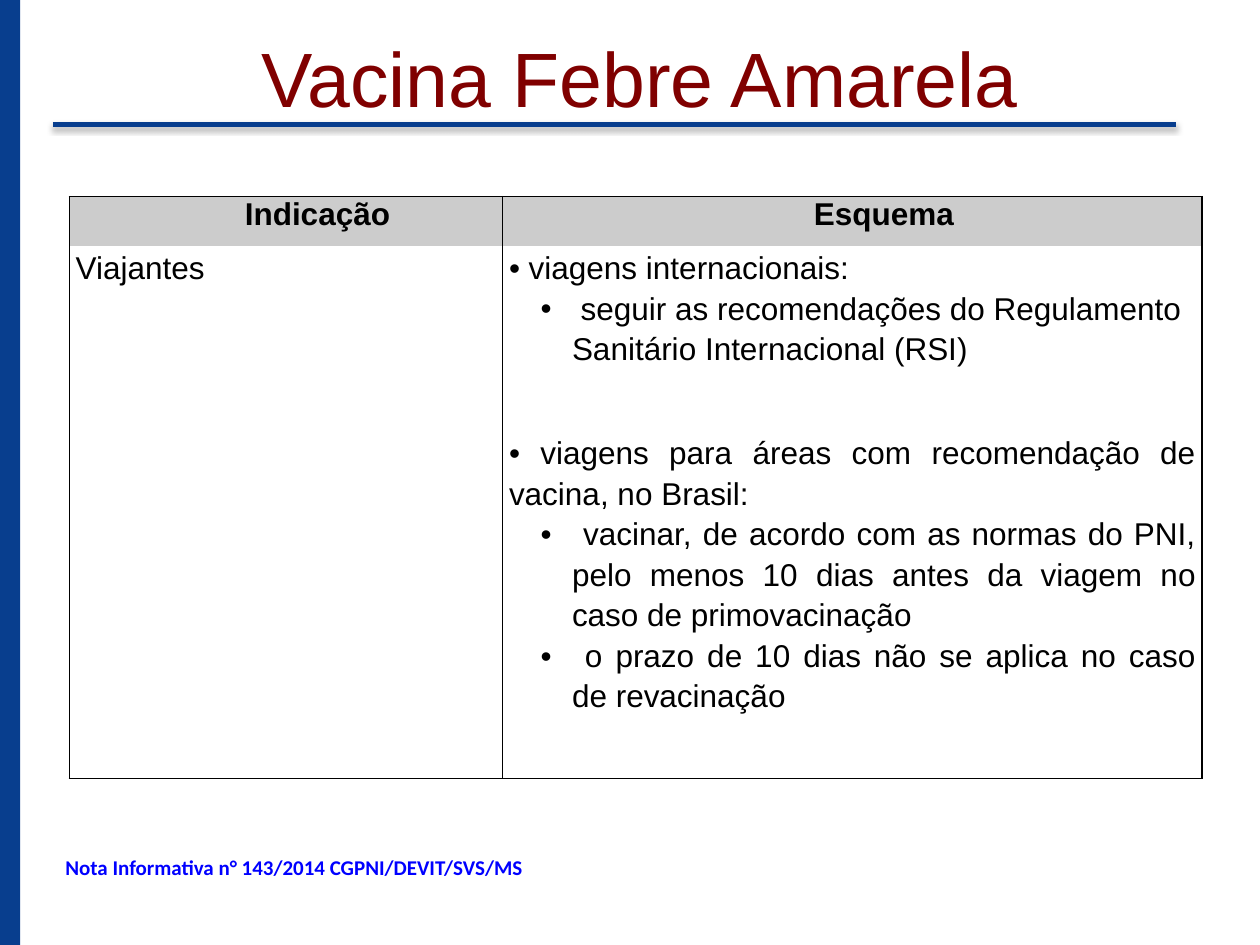
from dataclasses import dataclass

import pptx
import pptx.dml.color
import pptx.enum.shapes
import pptx.enum.text
import pptx.oxml
import pptx.oxml.ns
import pptx.util

Inches = pptx.util.Inches
Pt = pptx.util.Pt
RGBColor = pptx.dml.color.RGBColor
Align = pptx.enum.text.PP_ALIGN

NAVY = RGBColor(0x08, 0x3E, 0x8E)
MAROON = RGBColor(0x80, 0x00, 0x00)
BLUE = RGBColor(0x00, 0x00, 0xFF)
BLACK = RGBColor(0x00, 0x00, 0x00)
GREY = RGBColor(0xCC, 0xCC, 0xCC)
NAMESPACE = pptx.oxml.ns.nsdecls("a")


@dataclass
class Entry:
    text: str
    align: Align = Align.LEFT
    bullet: bool = False
    level: int = 0
    margin: float = 0
    hanging: float = 0
    bold: bool = False
    spacing: float = 1.15


def heading(text: str) -> Entry:
    return Entry(text, Align.CENTER, margin=0.5, bold=True, spacing=1)


def topic(text: str) -> Entry:
    return Entry(text, Align.JUSTIFY, bullet=True)


def detail(text: str, align: Align = Align.JUSTIFY) -> Entry:
    return Entry(text, align, bullet=True, level=1, margin=0.5, hanging=0.25)


ROWS = [
    [[heading("Indicação")], [heading("Esquema")]],
    [
        [Entry("Viajantes")],
        [
            topic(" viagens internacionais:"),
            detail(" seguir as recomendações do Regulamento Sanitário Internacional (RSI)", Align.LEFT),
        ],
    ],
    [
        [],
        [
            topic(" viagens para áreas com recomendação de vacina, no Brasil:"),
            detail(" vacinar, de acordo com as normas do PNI, pelo menos 10 dias antes da viagem no caso de primovacinação"),
            detail(" o prazo de 10 dias não se aplica no caso de revacinação"),
        ],
    ],
]
COLUMN_WIDTHS = [3.44, 5.55]
ROW_HEIGHTS = [0.39, 1.47, 2.76]


def style_font(font, name: str, size: float, color: RGBColor, bold: bool = False) -> None:
    font.name = name
    font.size = Pt(size)
    font.bold = bold
    font.color.rgb = color


def add_label(page, text: str, left: float, top: float, width: float, height: float, wrap: bool):
    box = page.shapes.add_textbox(Inches(left), Inches(top), Inches(width), Inches(height))
    box.text_frame.word_wrap = wrap
    box.text_frame.text = text
    return box


def add_rule(page) -> None:
    rule = page.shapes.add_connector(
        pptx.enum.shapes.MSO_CONNECTOR.STRAIGHT, Inches(0.42), Inches(0.99), Inches(9.33), Inches(0.99)
    )
    rule.line.color.rgb = NAVY
    rule.line.width = Pt(3)
    shadow = (
        f'<a:effectLst {NAMESPACE}><a:outerShdw blurRad="{Pt(3.1)}" dist="{Pt(1.8)}" dir="5400000" '
        'rotWithShape="0"><a:srgbClr val="000000"><a:alpha val="35000"/></a:srgbClr>'
        "</a:outerShdw></a:effectLst>"
    )
    properties = rule.element.find(pptx.oxml.ns.qn("p:spPr"))
    properties.append(pptx.oxml.parse_xml(shadow))


def set_borders(cell, sides: str) -> None:
    properties = cell._tc.get_or_add_tcPr()
    for side in "LRTB":
        paint = '<a:solidFill><a:srgbClr val="000000"/></a:solidFill>' if side in sides else "<a:noFill/>"
        border = f'<a:ln{side} {NAMESPACE} w="{Pt(1)}">{paint}</a:ln{side}>'
        properties.append(pptx.oxml.parse_xml(border))


def fill_paragraph(para, entry: Entry) -> None:
    para.text = entry.text
    para.alignment = entry.align
    para.level = entry.level
    para.line_spacing = entry.spacing
    properties = para._p.get_or_add_pPr()
    properties.set("marL", str(Inches(entry.margin)))
    properties.set("indent", str(-Inches(entry.hanging)))
    if entry.bullet:
        properties.append(pptx.oxml.parse_xml(f'<a:buFont {NAMESPACE} typeface="Arial"/>'))
        properties.append(pptx.oxml.parse_xml(f'<a:buChar {NAMESPACE} char="•"/>'))
    for span in para.runs:
        style_font(span.font, "Arial", 18, BLACK, entry.bold)


def fill_cell(cell, entries: list[Entry], is_header: bool, is_last: bool) -> None:
    set_borders(cell, "LR" + ("T" if is_header else "") + ("B" if is_last else ""))
    cell.margin_left = cell.margin_right = Inches(0.07 if is_header else 0.05)
    cell.margin_top = cell.margin_bottom = 0
    if is_header:
        cell.fill.solid()
        cell.fill.fore_color.rgb = GREY
    else:
        cell.fill.background()
    frame = cell.text_frame
    for index, entry in enumerate(entries):
        fill_paragraph(frame.add_paragraph() if index else frame.paragraphs[0], entry)


def add_scheme_table(page) -> None:
    table = page.shapes.add_table(
        len(ROW_HEIGHTS), len(COLUMN_WIDTHS), Inches(0.55), Inches(1.56),
        Inches(sum(COLUMN_WIDTHS)), Inches(sum(ROW_HEIGHTS)),
    ).table
    table.first_row = False
    table.horz_banding = False
    for column, width in zip(table.columns, COLUMN_WIDTHS):
        column.width = Inches(width)
    for index, (row, height, contents) in enumerate(zip(table.rows, ROW_HEIGHTS, ROWS)):
        row.height = Inches(height)
        for cell, entries in zip(row.cells, contents):
            fill_cell(cell, entries, index == 0, index == len(ROWS) - 1)


def main() -> None:
    deck = pptx.Presentation()
    deck.slide_width = Inches(10)
    deck.slide_height = Inches(7.5)
    page = deck.slides.add_slide(deck.slide_layouts[6])

    stripe = page.shapes.add_shape(
        pptx.enum.shapes.MSO_SHAPE.RECTANGLE, 0, 0, Inches(0.16), Inches(7.5)
    )
    stripe.shadow.inherit = False
    stripe.fill.solid()
    stripe.fill.fore_color.rgb = NAVY
    stripe.line.fill.background()
    add_rule(page)

    title = add_label(page, "Vacina Febre Amarela", 0.83, 0.13, 8.5, 1.25, True)
    title.text_frame.margin_top = Inches(0.11)
    title_para = title.text_frame.paragraphs[0]
    title_para.alignment = Align.CENTER
    style_font(title_para.runs[0].font, "Arial", 44, MAROON)

    note = add_label(page, "Nota Informativa n° 143/2014 CGPNI/DEVIT/SVS/MS", 0.42, 6.73, 3.88, 0.3, False)
    style_font(note.text_frame.paragraphs[0].runs[0].font, "Calibri", 12, BLUE, True)

    add_scheme_table(page)
    deck.save("out.pptx")


if __name__ == "__main__":
    main()
